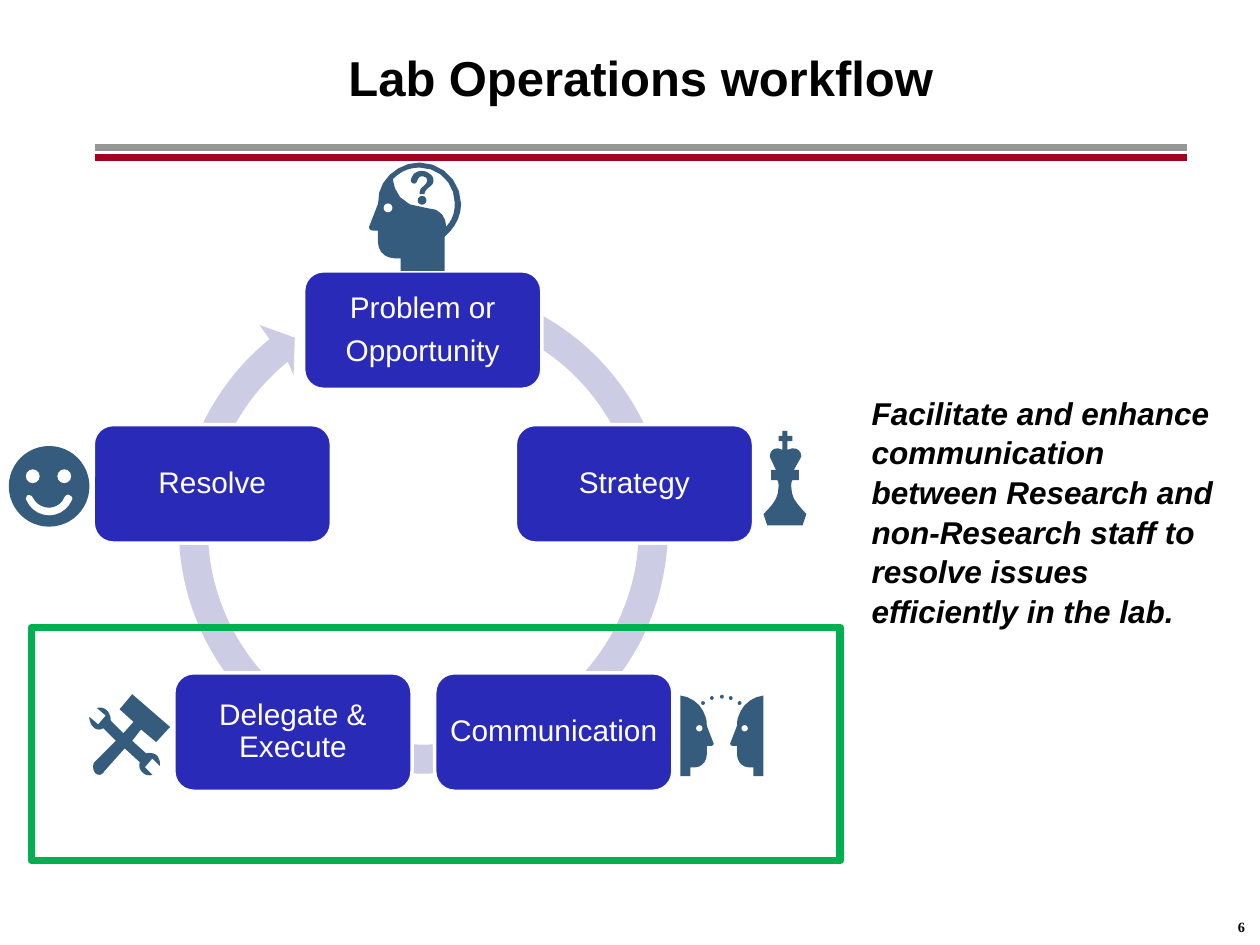
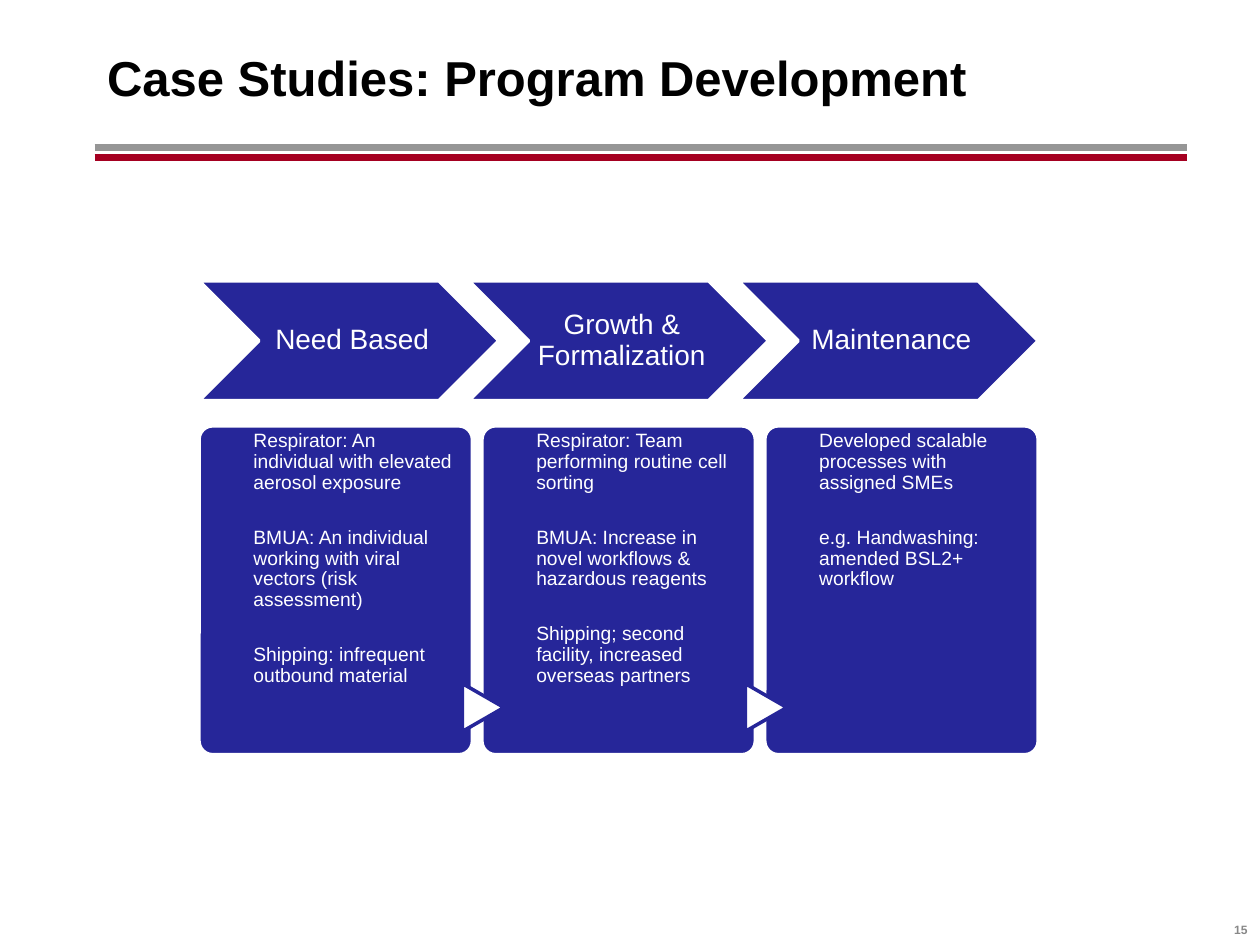
import math

import pptx
import pptx.dml.color
import pptx.enum.shapes
import pptx.enum.text
import pptx.oxml.ns
import pptx.util
from lxml import etree

Inches = pptx.util.Inches
Pt = pptx.util.Pt
SHAPE = pptx.enum.shapes.MSO_SHAPE
ALIGN = pptx.enum.text.PP_ALIGN
ANCHOR = pptx.enum.text.MSO_ANCHOR

COLORS = {
    name: pptx.dml.color.RGBColor.from_string(value)
    for name, value in {
        "white": "FFFFFF",
        "black": "000000",
        "band gray": "969696",
        "band red": "A50021",
        "number gray": "888888",
        "cycle box": "2A2AB9",
        "cycle ring": "CCCCE5",
        "icon": "355C7D",
        "highlight": "00B050",
        "phase": "262699",
    }.items()
}


def add_block(slide, kind, box, fill=None, line=None, width=2, adjustment=None,
              texts=(), size=16, insets=(0.07, 0.07, 0.07, 0.07), space=0,
              align=ALIGN.CENTER, anchor=ANCHOR.MIDDLE):
    """Add a preset shape at box (left, top, width, height) with white Arial paragraphs."""
    shape = slide.shapes.add_shape(kind, *[Inches(length) for length in box])
    shape.shadow.inherit = False
    if fill:
        shape.fill.solid()
        shape.fill.fore_color.rgb = COLORS[fill]
    else:
        shape.fill.background()
    if line:
        shape.line.color.rgb = COLORS[line]
        shape.line.width = Pt(width)
    else:
        shape.line.fill.background()
    if adjustment is not None:
        shape.adjustments[0] = adjustment
    if texts:
        frame = shape.text_frame
        frame.word_wrap = True
        frame.vertical_anchor = anchor
        (frame.margin_left, frame.margin_top,
         frame.margin_right, frame.margin_bottom) = [Inches(inset) for inset in insets]
        frame.text = "\n".join(texts)
        for index, paragraph in enumerate(frame.paragraphs):
            paragraph.alignment = align
            paragraph.line_spacing = 0.9
            paragraph.space_before = Pt(space if index else 0)
            paragraph.font.name = "Arial"
            paragraph.font.size = Pt(size)
            paragraph.font.color.rgb = COLORS["white"]
    return shape


def add_outline(slide, contours, fill):
    """Fill closed contours; a step is a point (x, y) or a Bezier curve of six numbers."""
    builder = None
    for start, *steps in contours:
        points = [start]
        for step in steps:
            if len(step) == 2:
                points.append(step)
                continue
            x0, y0 = points[-1]
            x1, y1, x2, y2, x3, y3 = step
            for t in (0.2, 0.4, 0.6, 0.8, 1):
                a, b, c, d = (1 - t) ** 3, 3 * t * (1 - t) ** 2, 3 * t * t * (1 - t), t ** 3
                points.append((a * x0 + b * x1 + c * x2 + d * x3,
                               a * y0 + b * y1 + c * y2 + d * y3))
        points = [(x * 1000, y * 1000) for x, y in points]
        if builder is None:
            builder = slide.shapes.build_freeform(*points[0], scale=Inches(1) / 1000)
        else:
            builder.move_to(*points[0])
        builder.add_line_segments(points[1:], close=True)
    shape = builder.convert_to_shape()
    shape.shadow.inherit = False
    shape.fill.solid()
    shape.fill.fore_color.rgb = COLORS[fill]
    shape.line.fill.background()


presentation = pptx.Presentation()
presentation.slide_width = Inches(10)
presentation.slide_height = Inches(7.5)

# Titles, bands and slide numbers
slides = []
for title_text, title_align, number, left, top, font, size, color in (
    ("Lab Operations workflow", ALIGN.CENTER, "6", 7.65, 7.09, "Times New Roman", 14, "black"),
    ("Case Studies: Program Development", ALIGN.LEFT, "15", 7.67, 7.12, "Arial", 12, "number gray"),
):
    slide = presentation.slides.add_slide(presentation.slide_layouts[5])
    slides.append(slide)

    title = slide.shapes.title
    title.left, title.top = Inches(0.75), Inches(0.18)
    title.width, title.height = Inches(8.67), Inches(0.86)
    title.fill.solid()
    title.fill.fore_color.rgb = COLORS["white"]
    title.text_frame.text = title_text
    title.text_frame.vertical_anchor = ANCHOR.MIDDLE
    paragraph = title.text_frame.paragraphs[0]
    paragraph.alignment = title_align
    paragraph.font.name = "Arial"
    paragraph.font.size = Pt(28)
    paragraph.font.bold = True
    paragraph.font.color.rgb = COLORS["black"]

    for band_y, band_color in ((1.17, "band gray"), (1.25, "band red")):
        band = slide.shapes.add_connector(
            pptx.enum.shapes.MSO_CONNECTOR.STRAIGHT,
            Inches(0.75), Inches(band_y), Inches(9.42), Inches(band_y))
        band.line.color.rgb = COLORS[band_color]
        band.line.width = Pt(4.25)
        etree.SubElement(band._element.spPr, pptx.oxml.ns.qn("a:effectLst"))

    number_box = slide.shapes.add_textbox(Inches(left), Inches(top), Inches(2.33), Inches(0.4))
    number_box.text_frame.word_wrap = True
    number_box.text_frame.vertical_anchor = ANCHOR.MIDDLE
    paragraph = number_box.text_frame.paragraphs[0]
    paragraph.alignment = ALIGN.RIGHT
    run = paragraph.add_run()
    run.text = number
    run.font.name = font
    run.font.size = Pt(size)
    run.font.bold = True
    run.font.color.rgb = COLORS[color]
    run._r.get_or_add_rPr().set("baseline", "-25000")

workflow, case_studies = slides

# Workflow: statement beside the cycle
statement = workflow.shapes.add_textbox(Inches(6.82), Inches(3.06), Inches(3.04), Inches(1.92))
statement.text_frame.word_wrap = True
paragraph = statement.text_frame.paragraphs[0]
paragraph.text = ("Facilitate and enhance communication between Research and "
                  "non-Research staff to resolve issues efficiently in the lab.")
paragraph.line_spacing = 1.05
paragraph.font.name = "Arial"
paragraph.font.size = Pt(18)
paragraph.font.bold = True
paragraph.font.italic = True
paragraph.font.color.rgb = COLORS["black"]

# Workflow: ring with an arrowhead, clockwise from the first box
center_x, center_y = 3.36, 4.2
outer_arc, inner_arc = [
    [(center_x + radius * math.cos(math.radians(angle)),
      center_y + radius * math.sin(math.radians(angle))) for angle in range(-71, 232, 2)]
    for radius in (1.94, 1.71)
]
arrowhead = [(2.06, 2.58), (2.34, 2.68), (2.33, 2.98)]
add_outline(workflow, [outer_arc + arrowhead + inner_arc[::-1]], "cycle ring")

for left, top, texts in (
    (2.41, 2.15, ["Problem or", "Opportunity"]),
    (4.09, 3.37, ["Strategy"]),
    (3.45, 5.34, ["Communication"]),
    (1.38, 5.34, ["Delegate & Execute"]),
    (0.74, 3.37, ["Resolve"]),
):
    add_block(workflow, SHAPE.ROUNDED_RECTANGLE, (left, top, 1.89, 0.94), "cycle box", "white",
              adjustment=0.167, texts=texts, size=17, space=6)

# Workflow: icons
thinking_head = [
    [(3.66, 1.62), (3.66, 1.72, 3.61, 1.81, 3.53, 1.88), (3.53, 2.15), (3.18, 2.15),
     (3.18, 2.05), (3.13, 2.05), (3.06, 2.05, 3, 2, 3, 1.92), (3, 1.83), (2.96, 1.83),
     (2.94, 1.83, 2.93, 1.82, 2.93, 1.8), (3, 1.62), (3, 1.62, 3.01, 1.55, 3.01, 1.53),
     (3.04, 1.4, 3.18, 1.29, 3.33, 1.29), (3.51, 1.29, 3.66, 1.44, 3.66, 1.62)],
    [(3.61, 1.61), (3.61, 1.46, 3.49, 1.33, 3.33, 1.33), (3.25, 1.33, 3.18, 1.36, 3.12, 1.42),
     (3.12, 1.42, 3.12, 1.64, 3.38, 1.65), (3.55, 1.65, 3.54, 1.8, 3.54, 1.8),
     (3.59, 1.75, 3.61, 1.69, 3.61, 1.61)],
]
question_mark = [
    [(3.41, 1.38), (3.38, 1.35, 3.33, 1.35, 3.3, 1.37), (3.28, 1.38, 3.27, 1.4, 3.26, 1.43),
     (3.26, 1.46, 3.3, 1.47, 3.31, 1.44), (3.32, 1.41, 3.33, 1.4, 3.35, 1.4),
     (3.37, 1.4, 3.39, 1.41, 3.39, 1.43), (3.39, 1.45, 3.38, 1.46, 3.36, 1.48),
     (3.34, 1.49, 3.33, 1.51, 3.33, 1.54), (3.37, 1.54), (3.37, 1.52, 3.38, 1.51, 3.4, 1.49),
     (3.43, 1.47, 3.44, 1.46, 3.44, 1.43), (3.44, 1.41, 3.43, 1.39, 3.41, 1.38)],
]
chess_king = [
    [(6.09, 4.17), (6.37, 4.17), (6.4, 4.08), (6.33, 4, 6.28, 3.96, 6.28, 3.86),
     (6.28, 3.84, 6.28, 3.83, 6.29, 3.81), (6.34, 3.81), (6.34, 3.73), (6.3, 3.73),
     (6.3, 3.73, 6.36, 3.63, 6.36, 3.62), (6.36, 3.57, 6.31, 3.54, 6.25, 3.57),
     (6.25, 3.5), (6.29, 3.5), (6.29, 3.46), (6.25, 3.46), (6.25, 3.42), (6.21, 3.42),
     (6.21, 3.46), (6.18, 3.46), (6.18, 3.5), (6.21, 3.5), (6.21, 3.57),
     (6.16, 3.54, 6.11, 3.57, 6.11, 3.62), (6.11, 3.63, 6.16, 3.73, 6.16, 3.73),
     (6.12, 3.73), (6.12, 3.81), (6.17, 3.81), (6.18, 3.83, 6.18, 3.84, 6.18, 3.86),
     (6.18, 3.96, 6.13, 4.01, 6.06, 4.08)],
]
left_face = [
    (5.4, 5.52), (5.5, 5.53, 5.58, 5.61, 5.6, 5.69), (5.61, 5.71, 5.61, 5.76, 5.61, 5.76),
    (5.66, 5.89), (5.67, 5.91, 5.66, 5.92, 5.64, 5.92), (5.61, 5.92), (5.61, 5.99),
    (5.61, 6.04, 5.57, 6.09, 5.52, 6.09), (5.48, 6.09), (5.48, 6.16), (5.4, 6.16),
]
right_face = [tuple(value if index % 2 else 11.46 - value for index, value in enumerate(step))
              for step in left_face]
tools = [
    [(1.27, 6.06), (1.27, 6.08), (1.21, 6.02), (1.15, 6.09), (1.21, 6.15),
     (1.18, 6.16, 1.15, 6.15, 1.13, 6.13), (1.11, 6.11, 1.1, 6.08, 1.11, 6.05),
     (0.99, 5.94), (0.83, 6.12), (0.82, 6.14, 0.8, 6.15, 0.79, 6.15),
     (0.76, 6.15, 0.74, 6.12, 0.74, 6.09), (0.74, 6.08, 0.74, 6.06, 0.75, 6.05),
     (0.92, 5.88), (0.82, 5.78), (0.79, 5.8, 0.76, 5.79, 0.74, 5.77),
     (0.72, 5.75, 0.71, 5.72, 0.71, 5.69), (0.78, 5.75), (0.84, 5.68), (0.77, 5.62),
     (0.8, 5.61, 0.83, 5.62, 0.85, 5.64), (0.87, 5.66, 0.88, 5.69, 0.88, 5.72),
     (0.98, 5.82), (1.06, 5.73), (0.95, 5.63), (1.05, 5.51), (1.35, 5.77), (1.24, 5.89),
     (1.12, 5.79), (1.05, 5.88), (1.16, 5.98), (1.19, 5.97, 1.23, 5.98, 1.25, 6),
     (1.26, 6.02, 1.27, 6.04, 1.27, 6.06)],
]
smile = [
    [(0.39, 4.09), (0.47, 4.09, 0.54, 4.04, 0.57, 3.97), (0.58, 3.95, 0.57, 3.94, 0.55, 3.93),
     (0.54, 3.92, 0.52, 3.93, 0.51, 3.95), (0.49, 4, 0.44, 4.03, 0.39, 4.03),
     (0.33, 4.03, 0.29, 4, 0.26, 3.95), (0.25, 3.93, 0.24, 3.93, 0.22, 3.93),
     (0.21, 3.94, 0.2, 3.96, 0.21, 3.97), (0.24, 4.04, 0.31, 4.09, 0.39, 4.09)],
]
for icon in (thinking_head, question_mark, chess_king, [left_face, right_face], tools):
    add_outline(workflow, icon, "icon")

question_dot = (3.35, 1.59, 0.07, "icon")
smiley_face = (0.39, 3.86, 0.64, "icon")
eyes = [(3.08, 1.65, 0.07, "white"), (5.55, 5.78, 0.05, "white"), (5.91, 5.78, 0.05, "white"),
        (0.26, 3.78, 0.11, "white"), (0.51, 3.78, 0.11, "white")]
talk_dots = [(x, y, 0.03, "icon") for x, y in
             ((5.58, 5.58), (5.65, 5.54), (5.73, 5.53), (5.8, 5.54), (5.87, 5.58))]
for x, y, diameter, color in [question_dot, smiley_face, *eyes, *talk_dots]:
    add_block(workflow, SHAPE.OVAL,
              (x - diameter / 2, y - diameter / 2, diameter, diameter), color)
add_outline(workflow, smile, "white")

add_block(workflow, SHAPE.RECTANGLE, (0.25, 4.98, 6.42, 1.85), line="highlight", width=4.5)

# Case studies: phases above, examples below
phases = [
    ("Need Based", [
        "Respirator: An individual with elevated aerosol exposure",
        "BMUA: An individual working with viral vectors (risk assessment)",
        "Shipping: infrequent outbound material"]),
    ("Growth & Formalization", [
        "Respirator: Team performing routine cell sorting",
        "BMUA: Increase in novel workflows & hazardous reagents",
        "Shipping; second facility, increased overseas partners"]),
    ("Maintenance", [
        "Developed scalable processes with assigned SMEs",
        "e.g. Handwashing: amended BSL2+ workflow"]),
]
for index, (phase, examples) in enumerate(phases):
    add_block(case_studies, SHAPE.CHEVRON, (1.58 + 2.14 * index, 2.23, 2.38, 0.95),
              "phase", "white", adjustment=0.5, texts=[phase],
              insets=(0.07, 0.02, 0.02, 0.02))
    card_left = 1.58 + 2.245 * index
    add_block(case_studies, SHAPE.ROUNDED_RECTANGLE, (card_left, 3.38, 2.17, 2.61),
              "phase", "white", adjustment=0.05, texts=examples, size=11, space=19.5,
              insets=(0.4, 0.01, 0.08, 0), align=ALIGN.LEFT, anchor=ANCHOR.TOP)
    if index:
        pointer = add_block(case_studies, SHAPE.FLOWCHART_EXTRACT,
                            (card_left - 0.18, 5.45, 0.38, 0.33), "white", "phase")
        pointer.rotation = 90

presentation.save("out.pptx")
